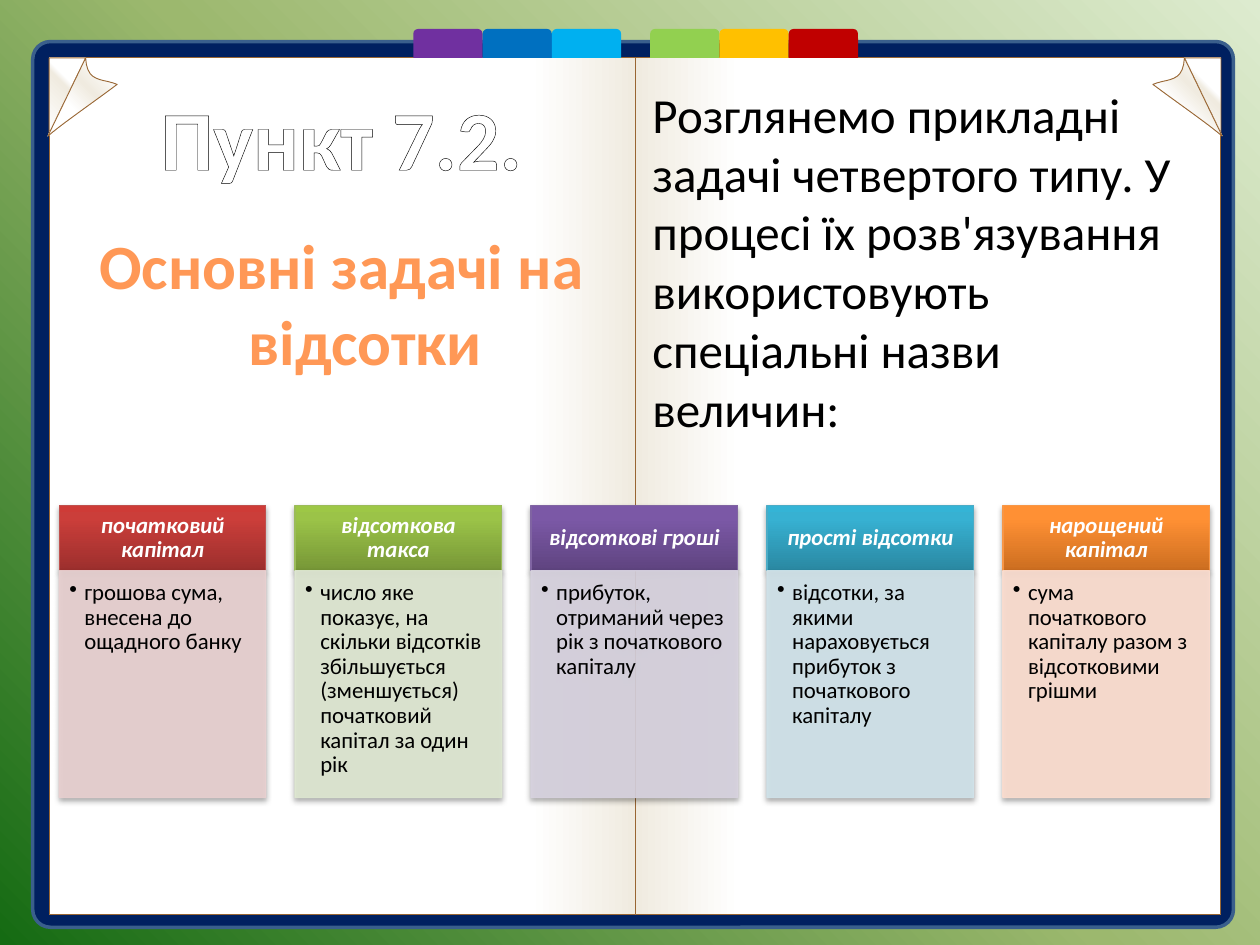
from dataclasses import dataclass

import pptx
import pptx.dml.color
import pptx.enum.shapes
import pptx.enum.text
import pptx.oxml
import pptx.oxml.ns
import pptx.util
from pptx.util import Inches

SHAPE = pptx.enum.shapes.MSO_SHAPE
ALIGN = pptx.enum.text.PP_ALIGN
ANCHOR = pptx.enum.text.MSO_ANCHOR
qn = pptx.oxml.ns.qn
NAMESPACE = pptx.oxml.ns.nsdecls("a")

FONT = "Calibri"
PAGE_LINE = "996633"
SPINE = 5.04
PAGE_STOPS = [(0, "FFFFFF"), (82, "FFFFFF"), (100, "F0EBE0")]
FOLD_STOPS = [(0, "FFFFFF"), (57, "F0EBE0"), (65, "FFFFFF")]
CURL_STOPS = [(12, "FFFFFF"), (40, "F0EBE0"), (65, "FFFFFF")]


@dataclass
class Card:
    title: str
    definition: str
    header_colors: tuple[str, str, str]
    line_color: str
    body_color: str


CARDS = [
    Card("початковий капітал", "грошова сума, внесена до ощадного банку",
         ("9C2F2D", "CB3E3A", "CE3B37"), "C0504D", "E8D0D0"),
    Card("відсоткова такса",
         "число яке показує, на скільки відсотків збільшується "
         "(зменшується) початковий капітал за один рік",
         ("779737", "9BC348", "9DC746"), "9BBB59", "DEE7D1"),
    Card("відсоткові гроші", "прибуток, отриманий через рік з початкового капіталу",
         ("5F4480", "7B58A6", "7C57A8"), "8064A2", "D8D3E0"),
    Card("прості відсотки",
         "відсотки, за якими нараховується прибуток з початкового капіталу",
         ("2A88A2", "37B1D2", "34B4D6"), "4BACC6", "D0E3EA"),
    Card("нарощений капітал", "сума початкового капіталу разом з відсотковими грішми",
         ("CC6E20", "FF9034", "FF9136"), "F79646", "FCDDCF"),
]


def rgb(value: str):
    return pptx.dml.color.RGBColor.from_string(value)


def fill_gradient(fill, element, stops, angle: int) -> None:
    """Fill with (percent, colour) stops; the angle runs clockwise."""
    fill.gradient()
    fill.gradient_angle = (360 - angle) % 360
    stop_list = element.find(".//" + qn("a:gsLst"))
    for stop in list(stop_list):
        stop_list.remove(stop)
    for percent, color in stops:
        stop_list.append(pptx.oxml.parse_xml(
            f'<a:gs {NAMESPACE} pos="{percent * 1000}"><a:srgbClr val="{color}"/></a:gs>'))


def set_line(shape, color: str | None, width: float = 0.5) -> None:
    shape.shadow.inherit = False
    if color is None:
        shape.line.fill.background()
        return
    shape.line.color.rgb = rgb(color)
    shape.line.width = pptx.util.Pt(width)


def add_box(slide, kind, left: float, top: float, width: float, height: float,
            line: str | None, line_width: float = 0.5):
    shape = slide.shapes.add_shape(
        kind, Inches(left), Inches(top), Inches(width), Inches(height))
    set_line(shape, line, line_width)
    return shape


def add_transparency(color_format_parent, alpha: int) -> None:
    color = color_format_parent.find(".//" + qn("a:srgbClr"))
    color.append(pptx.oxml.parse_xml(f'<a:alpha {NAMESPACE} val="{alpha * 1000}"/>'))


def add_shadow(shape) -> None:
    shape.element.spPr.find(qn("a:effectLst")).append(pptx.oxml.parse_xml(
        f'<a:outerShdw {NAMESPACE} blurRad="40000" dist="23000" dir="5400000" '
        'rotWithShape="0"><a:srgbClr val="000000"><a:alpha val="35000"/>'
        '</a:srgbClr></a:outerShdw>'))


def write_text(shape, text: str, size: float, color: str, align=ALIGN.LEFT,
               anchor=ANCHOR.TOP, bold: bool = False, italic: bool = False):
    frame = shape.text_frame
    frame.word_wrap = True
    frame.vertical_anchor = anchor
    frame.text = text
    paragraph = frame.paragraphs[0]
    paragraph.alignment = align
    font = paragraph.runs[0].font
    font.name, font.size = FONT, pptx.util.Pt(size)
    font.bold, font.italic = bold, italic
    font.color.rgb = rgb(color)
    return paragraph


def set_margins(shape, left: float, top: float, right: float, bottom: float) -> None:
    frame = shape.text_frame
    frame.margin_left, frame.margin_top = Inches(left), Inches(top)
    frame.margin_right, frame.margin_bottom = Inches(right), Inches(bottom)


def set_hanging_indent(paragraph, indent: float) -> None:
    properties = paragraph._p.get_or_add_pPr()
    properties.set("marL", str(Inches(indent)))
    properties.set("indent", str(-Inches(indent)))


def add_text_box(slide, left: float, top: float, width: float, height: float):
    return slide.shapes.add_textbox(
        Inches(left), Inches(top), Inches(width), Inches(height))


def curve(start, first, second, end, steps: int = 10):
    """Points along a cubic curve, without its start."""
    points = []
    for step in range(1, steps + 1):
        t = step / steps
        weights = ((1 - t) ** 3, 3 * t * (1 - t) ** 2, 3 * t * t * (1 - t), t ** 3)
        points.append(tuple(
            sum(weight * point[axis] for weight, point
                in zip(weights, (start, first, second, end))) for axis in (0, 1)))
    return points


def add_outline(slide, points, stops, angle: int, mirrored: bool) -> None:
    """Draw a closed outline, reflected across the spine when mirrored."""
    places = [(Inches(2 * SPINE - x if mirrored else x), Inches(y)) for x, y in points]
    builder = slide.shapes.build_freeform(*places[0])
    builder.add_line_segments(places[1:], close=True)
    shape = builder.convert_to_shape()
    fill_gradient(shape.fill, shape.element, stops, angle)
    set_line(shape, PAGE_LINE)


def add_book(slide) -> None:
    cover = add_box(slide, SHAPE.ROUNDED_RECTANGLE, 0.26, 0.33, 9.53, 7.03, "3A5F8C", 2)
    cover.adjustments[0] = 0.02
    cover.fill.solid()
    cover.fill.fore_color.rgb = rgb("002060")
    for left, angle in ((0.39, 0), (SPINE, 180)):
        page = add_box(slide, SHAPE.RECTANGLE, left, 0.46, 4.65, 6.8, PAGE_LINE)
        fill_gradient(page.fill, page.element, PAGE_STOPS, angle)

    fold = [(9.4, 0.46), (9.69, 1.06), (9.69, 0.46)]
    curl = [(9.15, 0.67),
            *curve((9.15, 0.67), (9.35, 0.82), (9.57, 0.97), (9.7, 1.08)),
            *curve((9.4, 0.46), (9.39, 0.66), (9.27, 0.62), (9.15, 0.67))]
    curl.insert(11, (9.4, 0.46))
    for mirrored in (False, True):
        add_outline(slide, fold, FOLD_STOPS, 315, mirrored)
        add_outline(slide, curl, CURL_STOPS, 135, mirrored)

    tab_width = 0.55
    for left, colors in ((3.28, ("7030A0", "0070C0", "00B0F0")),
                         (5.16, ("92D050", "FFC000", "C00000"))):
        for index, color in enumerate(colors):
            tab = add_box(slide, SHAPE.ROUND_2_SAME_RECTANGLE,
                          left + index * tab_width, 0.23, tab_width, 0.23, None)
            tab.fill.solid()
            tab.fill.fore_color.rgb = rgb(color)


def add_card(slide, card: Card, left: float) -> None:
    header = add_box(slide, SHAPE.RECTANGLE, left, 4.01, 1.64, 0.52, card.line_color, 0.75)
    fill_gradient(header.fill, header.element, zip((0, 80, 100), card.header_colors), 270)
    add_shadow(header)
    set_margins(header, 0.11, 0.06, 0.11, 0.06)
    paragraph = write_text(header, card.title, 13, "FFFFFF", ALIGN.CENTER,
                           ANCHOR.MIDDLE, bold=True, italic=True)
    paragraph.line_spacing = 0.9

    body = add_box(slide, SHAPE.RECTANGLE, left, 4.53, 1.64, 1.8, card.body_color, 0.75)
    body.fill.solid()
    body.fill.fore_color.rgb = rgb(card.body_color)
    add_transparency(body.element.spPr.find(qn("a:solidFill")).getparent(), 90)
    add_transparency(body.element.spPr.find(qn("a:ln")), 90)
    add_shadow(body)
    set_margins(body, 0.08, 0.08, 0.1, 0.11)
    paragraph = write_text(body, card.definition, 13, "000000")
    paragraph.line_spacing = 0.9
    set_hanging_indent(paragraph, 0.12)
    paragraph._p.get_or_add_pPr().append(
        pptx.oxml.parse_xml(f'<a:buChar {NAMESPACE} char="•"/>'))


def main() -> None:
    presentation = pptx.Presentation()
    presentation.slide_width, presentation.slide_height = Inches(10), Inches(7.5)
    slide = presentation.slides.add_slide(presentation.slide_layouts[6])
    fill_gradient(slide.background.fill, slide.element,
                  [(0, "DDEBCF"), (50, "9CB86E"), (100, "156B13")], 135)
    add_book(slide)

    title = write_text(add_text_box(slide, 0.5, 0.62, 4.42, 0.93), "Пункт 7.2.", 48,
                       "FFFFFF", ALIGN.CENTER, ANCHOR.MIDDLE, bold=True)
    title.runs[0]._r.get_or_add_rPr().insert(0, pptx.oxml.parse_xml(
        f'<a:ln {NAMESPACE} w="9525"><a:solidFill><a:srgbClr val="000000"/>'
        '</a:solidFill></a:ln>'))
    subtitle = write_text(add_text_box(slide, 0.5, 1.75, 4.42, 1.5),
                          "Основні задачі на відсотки", 36, "FF9856",
                          ALIGN.CENTER, bold=True)
    set_hanging_indent(subtitle, 0.38)
    write_text(add_text_box(slide, 5.08, 0.62, 4.42, 3.2),
               "Розглянемо прикладні задачі четвертого типу. У процесі їх "
               "розв'язування використовують спеціальні назви величин:", 28, "000000")

    first_left, last_left = 0.47, 7.96
    pitch = (last_left - first_left) / (len(CARDS) - 1)
    for index, card in enumerate(CARDS):
        add_card(slide, card, first_left + index * pitch)
    presentation.save("out.pptx")


if __name__ == "__main__":
    main()
